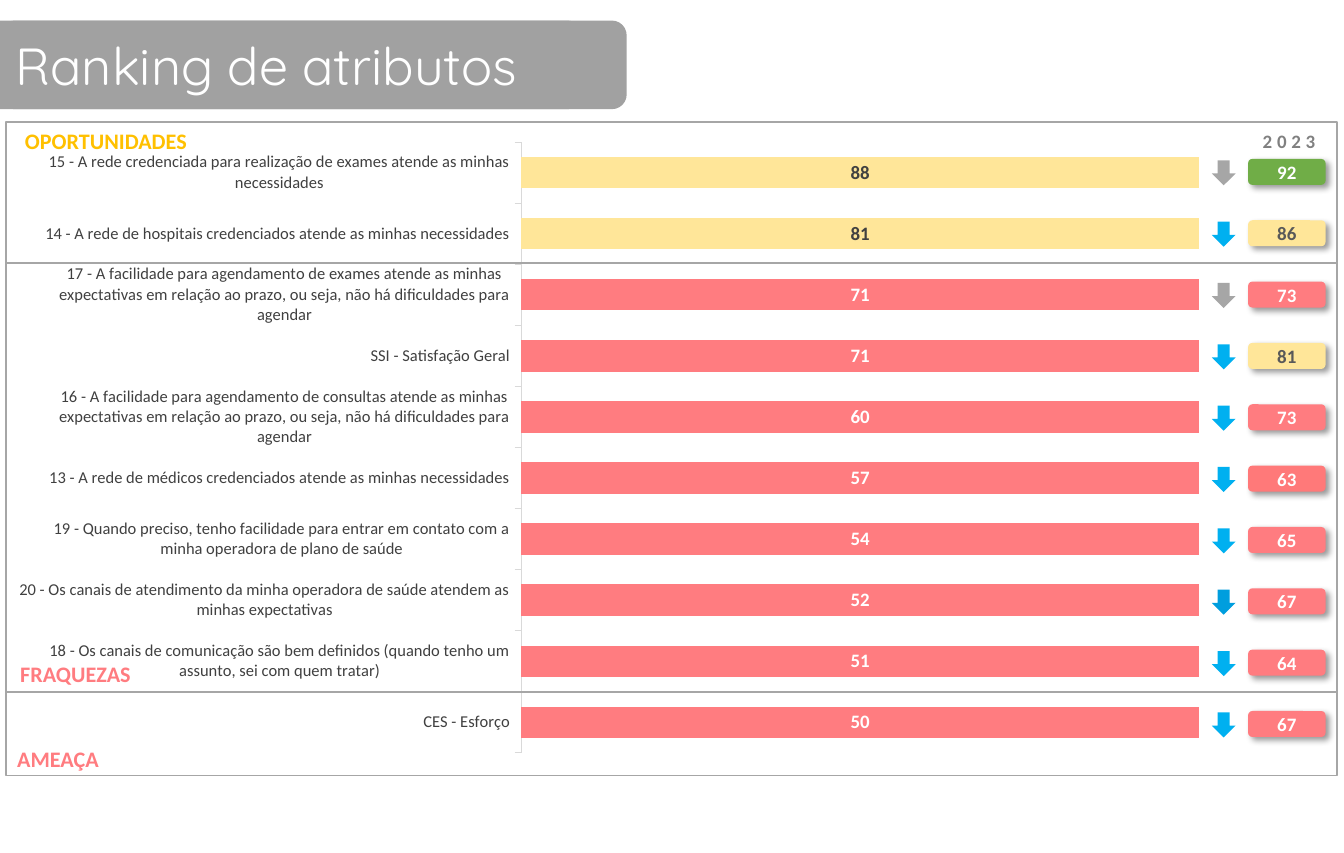
from dataclasses import dataclass

from lxml.etree import SubElement
from pptx import Presentation
from pptx.chart.data import CategoryChartData
from pptx.dml.color import RGBColor
from pptx.enum.chart import XL_CHART_TYPE as ChartType
from pptx.enum.shapes import MSO_SHAPE as Preset
from pptx.enum.text import MSO_ANCHOR as Anchor, MSO_AUTO_SIZE as AutoSize, PP_ALIGN as Align
from pptx.oxml import parse_xml
from pptx.oxml.ns import nsdecls, qn
from pptx.util import Cm, Pt


@dataclass(frozen=True)
class Theme:
    banner: str = "A1A1A1"
    frame: str = "A6A6A6"
    axis: str = "D9D9D9"
    year: str = "808080"
    white: str = "FFFFFF"
    dark: str = "404040"
    badge_dark: str = "595959"
    heading_gold: str = "FFC000"
    yellow: str = "FFE699"
    red: str = "FF7C80"
    bright_red: str = "FF7979"
    green: str = "70AD47"
    blue: str = "00B0F0"
    deep_blue: str = "009EDE"
    title_font: str = "Quicksand"
    body_font: str = "Calibri"
    title_size: float = 33
    heading_size: float = 14
    value_size: float = 12
    label_size: float = 10.5


THEME = Theme()


@dataclass(frozen=True)
class Attribute:
    question: str
    score: int
    previous: int
    badge: str = THEME.red
    arrow: str = THEME.blue
    bar: str = THEME.red


@dataclass(frozen=True)
class Section:
    heading: str
    color: str
    top: float
    height: float
    heading_left: float
    heading_top: float
    heading_width: float


ATTRIBUTES = [
    Attribute("15 - A rede credenciada para realização de exames atende as minhas necessidades",
              88, 92, THEME.green, THEME.frame, THEME.yellow),
    Attribute("14 - A rede de hospitais credenciados atende as minhas necessidades",
              81, 86, THEME.yellow, bar=THEME.yellow),
    Attribute("17 - A facilidade para agendamento de exames atende as minhas expectativas em relação "
              "ao prazo, ou seja, não há dificuldades para agendar", 71, 73, arrow=THEME.frame),
    Attribute("SSI - Satisfação Geral", 71, 81, THEME.yellow),
    Attribute("16 - A facilidade para agendamento de consultas atende as minhas expectativas em relação "
              "ao prazo, ou seja, não há dificuldades para agendar", 60, 73),
    Attribute("13 - A rede de médicos credenciados atende as minhas necessidades",
              57, 63, THEME.bright_red),
    Attribute("19 - Quando preciso, tenho facilidade para entrar em contato com a minha operadora "
              "de plano de saúde", 54, 65),
    Attribute("20 - Os canais de atendimento da minha operadora de saúde atendem as minhas expectativas",
              52, 67, arrow=THEME.deep_blue),
    Attribute("18 - Os canais de comunicação são bem definidos (quando tenho um assunto, "
              "sei com quem tratar)", 51, 64),
    Attribute("CES - Esforço", 50, 67),
]
SECTIONS = [
    Section("OPORTUNIDADES", THEME.heading_gold, 2.72, 3.15, -0.2, 2.72, 5.13),
    Section("FRAQUEZAS", THEME.red, 5.87, 9.59, -0.03, 14.63, 3.43),
    Section("AMEAÇA", THEME.red, 15.46, 1.86, 0, 16.53, 2.59),
]
ROW_PITCH = 1.37
PLOT_LAYOUT = {"x": 0.423, "y": 0.043, "w": 0.577, "h": 0.923}


def rgb(color: str) -> RGBColor:
    return RGBColor.from_string(color)


def style_font(font, size: float, color: str, bold: bool = False, name: str = THEME.body_font) -> None:
    font.name, font.size, font.bold = name, Pt(size), bold
    font.color.rgb = rgb(color)


def add_block(slide, preset, left: float, top: float, width: float, height: float, fill: str):
    block = slide.shapes.add_shape(preset, Cm(left), Cm(top), Cm(width), Cm(height))
    block.shadow.inherit = False
    block.fill.solid()
    block.fill.fore_color.rgb = rgb(fill)
    block.line.fill.background()
    return block


def add_banner(slide) -> None:
    add_block(slide, Preset.ROUNDED_RECTANGLE, -0.61, 0.46, 14.6, 1.98, THEME.banner)
    title = add_block(slide, Preset.ROUNDED_RECTANGLE, 0, 0.46, 13, 1.98, THEME.banner).text_frame
    title.text = "Ranking de atributos"
    title.vertical_anchor = Anchor.MIDDLE
    title.paragraphs[0].alignment = Align.LEFT
    style_font(title.paragraphs[0].runs[0].font, THEME.title_size, THEME.white, name=THEME.title_font)


def add_ranking(slide) -> None:
    data = CategoryChartData(number_format="0")
    data.categories = [attribute.question for attribute in ATTRIBUTES]
    data.add_series("Series 1", [attribute.score for attribute in ATTRIBUTES])
    ranking = slide.shapes.add_chart(
        ChartType.BAR_STACKED_100, Cm(0.43), Cm(2.54), Cm(26.34), Cm(14.78), data).chart
    ranking.has_legend = ranking.has_title = False
    style_font(ranking.font, THEME.value_size, "000000")

    questions = ranking.category_axis
    questions.reverse_order = True
    questions.format.line.color.rgb = rgb(THEME.axis)
    questions.format.line.width = Pt(0.75)
    style_font(questions.tick_labels.font, THEME.label_size, THEME.dark)
    ranking.value_axis.visible = False
    ranking.value_axis.has_major_gridlines = False

    plot = ranking.plots[0]
    plot.gap_width, plot.overlap, plot.vary_by_categories = 95, 100, False
    scores = plot.series[0]
    scores.format.fill.solid()
    scores.format.fill.fore_color.rgb = rgb(THEME.red)
    labels = scores.data_labels
    labels.show_value = True
    labels.number_format, labels.number_format_is_linked = "0", False
    style_font(labels.font, THEME.value_size, THEME.white, bold=True)
    for index, attribute in enumerate(ATTRIBUTES):
        if attribute.bar != THEME.red:
            point = scores.points[index]
            point.format.fill.solid()
            point.format.fill.fore_color.rgb = rgb(attribute.bar)
            style_font(point.data_label.font, THEME.value_size, THEME.dark, bold=True)

    area = ranking.plots[0]._element.getparent()
    for layout in area.findall(qn("c:layout")):
        area.remove(layout)
    settings = {"layoutTarget": "inner", "xMode": "edge", "yMode": "edge", **PLOT_LAYOUT}
    entries = "".join(f'<c:{key} val="{value}"/>' for key, value in settings.items())
    area.insert(0, parse_xml(
        f'<c:layout {nsdecls("c")}><c:manualLayout>{entries}</c:manualLayout></c:layout>'))


def add_heading(slide, text: str, left: float, top: float, width: float, height: float,
                size: float, color: str):
    heading = slide.shapes.add_textbox(Cm(left), Cm(top), Cm(width), Cm(height)).text_frame
    heading.word_wrap = True
    heading.auto_size = AutoSize.SHAPE_TO_FIT_TEXT
    heading.text = text
    heading.paragraphs[0].alignment = Align.CENTER
    run = heading.paragraphs[0].runs[0]
    style_font(run.font, size, color, bold=True)
    return run


def add_section(slide, section: Section) -> None:
    frame = add_block(slide, Preset.FLOWCHART_PROCESS, 0.13, section.top, 29.72, section.height, THEME.white)
    frame.fill.background()
    frame.line.color.rgb = rgb(THEME.frame)
    frame.line.width = Pt(1)
    add_heading(slide, section.heading, section.heading_left, section.heading_top,
                section.heading_width, 0.86, THEME.heading_size, section.color)


def add_comparison(slide, row: int, attribute: Attribute) -> None:
    offset = row * ROW_PITCH
    add_block(slide, Preset.DOWN_ARROW, 27.05, 3.58 + offset, 0.53, 0.56, attribute.arrow)
    badge = add_block(slide, Preset.ROUNDED_RECTANGLE, 27.86, 3.55 + offset, 1.73, 0.58, attribute.badge)
    effects = badge._element.spPr.find(qn("a:effectLst"))
    shadow = SubElement(effects, qn("a:outerShdw"), blurRad=str(Pt(4)), dist=str(Pt(3)),
                        dir="2700000", algn="tl", rotWithShape="0")
    black = SubElement(shadow, qn("a:srgbClr"), val="000000")
    SubElement(black, qn("a:alpha"), val="40000")
    value = badge.text_frame
    value.text = str(attribute.previous)
    value.vertical_anchor = Anchor.MIDDLE
    value.paragraphs[0].alignment = Align.CENTER
    color = THEME.badge_dark if attribute.badge == THEME.yellow else THEME.white
    style_font(value.paragraphs[0].runs[0].font, THEME.value_size, color, bold=True)


def main() -> None:
    deck = Presentation()
    deck.slide_width, deck.slide_height = Cm(30), Cm(19.05)
    slide = deck.slides.add_slide(deck.slide_layouts[6])
    add_banner(slide)
    add_ranking(slide)
    for section in SECTIONS:
        add_section(slide, section)
    year = add_heading(slide, "2023", 27.76, 2.77, 2.03, 0.76, THEME.value_size, THEME.year)
    year._r.get_or_add_rPr().set("spc", "300")
    for row, attribute in enumerate(ATTRIBUTES):
        add_comparison(slide, row, attribute)
    deck.save("out.pptx")


if __name__ == "__main__":
    main()
